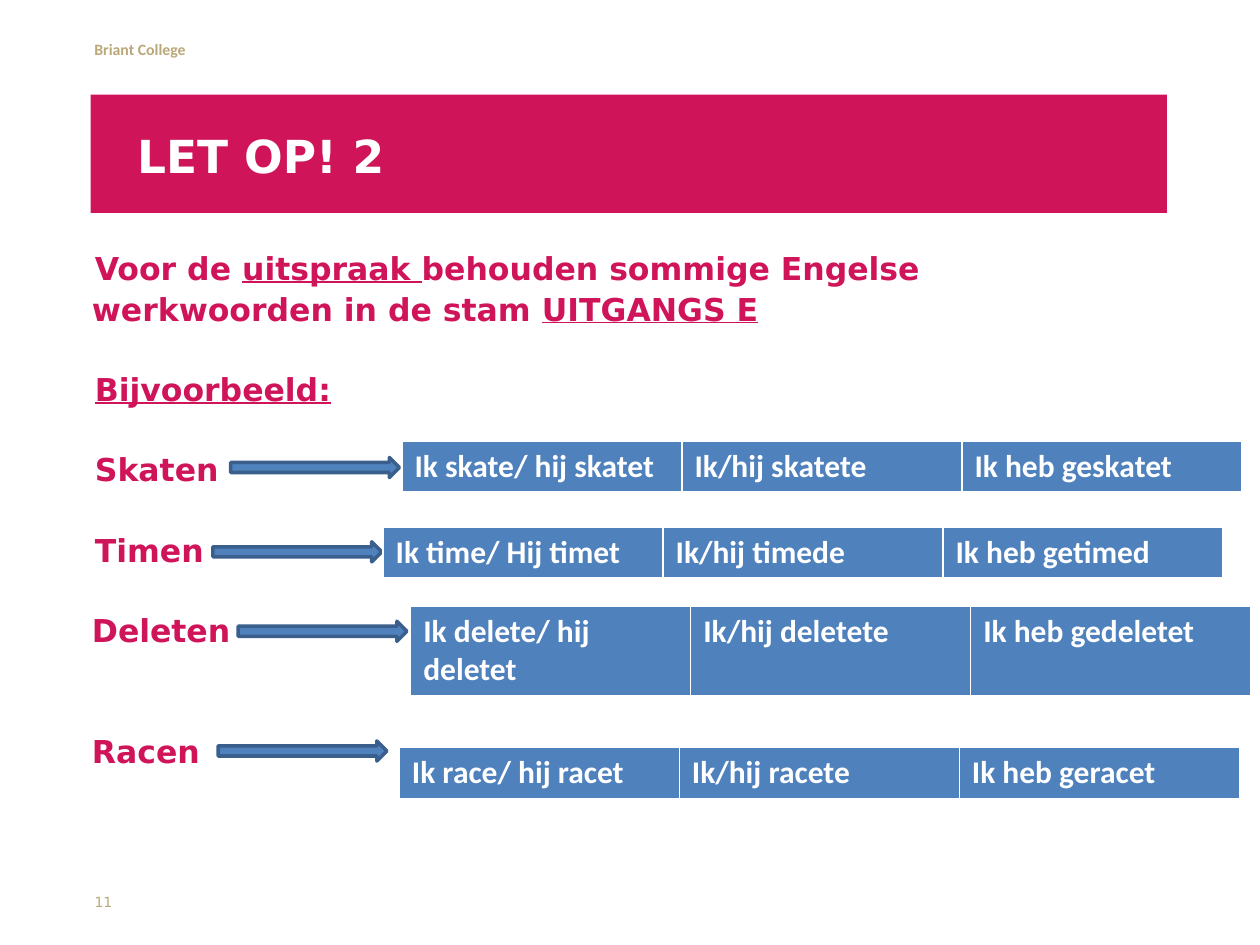
"""Build a slide on English verbs that keep their final e in Dutch."""
from pptx import Presentation
from pptx.dml.color import RGBColor
from pptx.enum.shapes import MSO_SHAPE
from pptx.enum.text import MSO_ANCHOR, MSO_AUTO_SIZE, PP_ALIGN
from pptx.util import Pt

ARROW = MSO_SHAPE.RIGHT_ARROW
TOP, MIDDLE = MSO_ANCHOR.TOP, MSO_ANCHOR.MIDDLE
FIXED = MSO_AUTO_SIZE.NONE
LEFT = PP_ALIGN.LEFT

PINK = RGBColor(0xD0, 0x14, 0x5A)
SAND = RGBColor(0xBA, 0xA8, 0x79)
BLUE = RGBColor(0x4F, 0x81, 0xBD)
NAVY = RGBColor(0x3A, 0x5F, 0x8C)
WHITE = RGBColor(0xFF, 0xFF, 0xFF)
SANS, PLAIN = "DejaVu Sans", "Calibri"

# Space before, first-line indent, runs of (text, underlined)
LINES = [
    (0, 1.7, [("Voor de ", False), ("uitspraak ", True),
              ("behouden sommige Engelse werkwoorden in de stam ", False),
              ("UITGANGS E", True)]),
    (23, 1.7, [("Bijvoorbeeld:", True)]),
    (23, 1.7, [("Skaten", False)]),
    (23, 1.7, [("Timen", False)]),
    (23, 0, [("Deleten", False)]),
    (46, 0, [("Racen", False)]),
]

# Arrow left and top, table left, top and height, verb forms
VERBS = [
    ((131.8, 261.4), (229.7, 252, 29.2),
     ["Ik skate/ hij skatet", "Ik/hij skatete", "Ik heb geskatet"]),
    ((121.7, 309.6), (218.9, 301, 29.2),
     ["Ik time/ Hij timet", "Ik/hij timede", "Ik heb getimed"]),
    ((136.1, 355), (234.7, 346.3, 50.4),
     ["Ik delete/ hij deletet", "Ik/hij deletete", "Ik heb gedeletet"]),
    ((124.6, 423.4), (228.2, 427, 29.2),
     ["Ik race/ hij racet", "Ik/hij racete", "Ik heb geracet"]),
]


def add_run(para, text, size, color, face=SANS, bold=True, under=False):
    """Add one formatted run to a paragraph."""
    run = para.add_run()
    run.text = text
    font = run.font
    font.size, font.name, font.bold = Pt(size), face, bold
    font.color.rgb = color
    if under:
        font.underline = True


def set_frame(frame, insets, anchor):
    """Set the insets, anchor and wrapping of a text frame."""
    frame.margin_left, frame.margin_top, frame.margin_right, frame.margin_bottom = map(Pt, insets)
    frame.vertical_anchor = anchor
    frame.word_wrap = True
    frame.auto_size = FIXED


def add_box(slide, place, insets, anchor=TOP):
    """Add a text box and return its frame."""
    frame = slide.shapes.add_textbox(*map(Pt, place)).text_frame
    set_frame(frame, insets, anchor)
    return frame


def add_title(slide, text):
    """Turn the title placeholder into a pink banner."""
    title = slide.shapes.title
    title.left, title.top, title.width, title.height = map(Pt, (51.8, 54, 615, 67.7))
    title.fill.solid()
    title.fill.fore_color.rgb = PINK
    set_frame(title.text_frame, (26.6, 5.8, 20.2, 3.6), MIDDLE)
    para = title.text_frame.paragraphs[0]
    para.alignment = LEFT
    add_run(para, text, 26, WHITE)


def add_body(slide):
    """Add the rule and the list of verbs."""
    frame = add_box(slide, (45.4, 137.5, 620.6, 346.3), (7.2, 3.6, 7.2, 3.6))
    for num, (gap, indent, runs) in enumerate(LINES):
        para = frame.add_paragraph() if num else frame.paragraphs[0]
        para.line_spacing = Pt(23)
        if gap:
            para.space_before = Pt(gap)
        para._p.get_or_add_pPr().set("indent", str(Pt(indent)))
        for text, under in runs:
            add_run(para, text, 18, PINK, under=under)


def add_arrow(slide, left, top):
    """Add a block arrow that points to a table."""
    arrow = slide.shapes.add_shape(ARROW, Pt(left), Pt(top), Pt(96.5), Pt(11.5))
    arrow.shadow.inherit = False
    arrow.fill.solid()
    arrow.fill.fore_color.rgb = BLUE
    arrow.line.color.rgb = NAVY
    arrow.line.width = Pt(2)


def add_forms(slide, left, top, height, forms):
    """Add a one-row table of verb forms."""
    table = slide.shapes.add_table(
        1, len(forms), Pt(left), Pt(top), Pt(480), Pt(height)).table
    for cell, text in zip(table.rows[0].cells, forms):
        cell.fill.solid()
        cell.fill.fore_color.rgb = BLUE
        add_run(cell.text_frame.paragraphs[0], text, 18, WHITE, PLAIN)


def main():
    """Build and save the slide."""
    deck = Presentation()
    deck.slide_width, deck.slide_height = Pt(720), Pt(540)
    slide = deck.slides.add_slide(deck.slide_layouts[5])
    slim = (0, 3.6, 0, 3.6)
    head = add_box(slide, (54, 19.4, 566.6, 18), slim)
    add_run(head.paragraphs[0], "Briant College", 9, SAND, PLAIN)
    add_title(slide, "LET OP! 2")
    add_body(slide)
    foot = add_box(slide, (54, 508.3, 22.3, 14.4), slim, MIDDLE)
    add_run(foot.paragraphs[0], "11", 8, SAND, bold=False)
    for start, place, forms in VERBS:
        add_arrow(slide, *start)
        add_forms(slide, *place, forms)
    deck.save("out.pptx")


if __name__ == "__main__":
    main()
